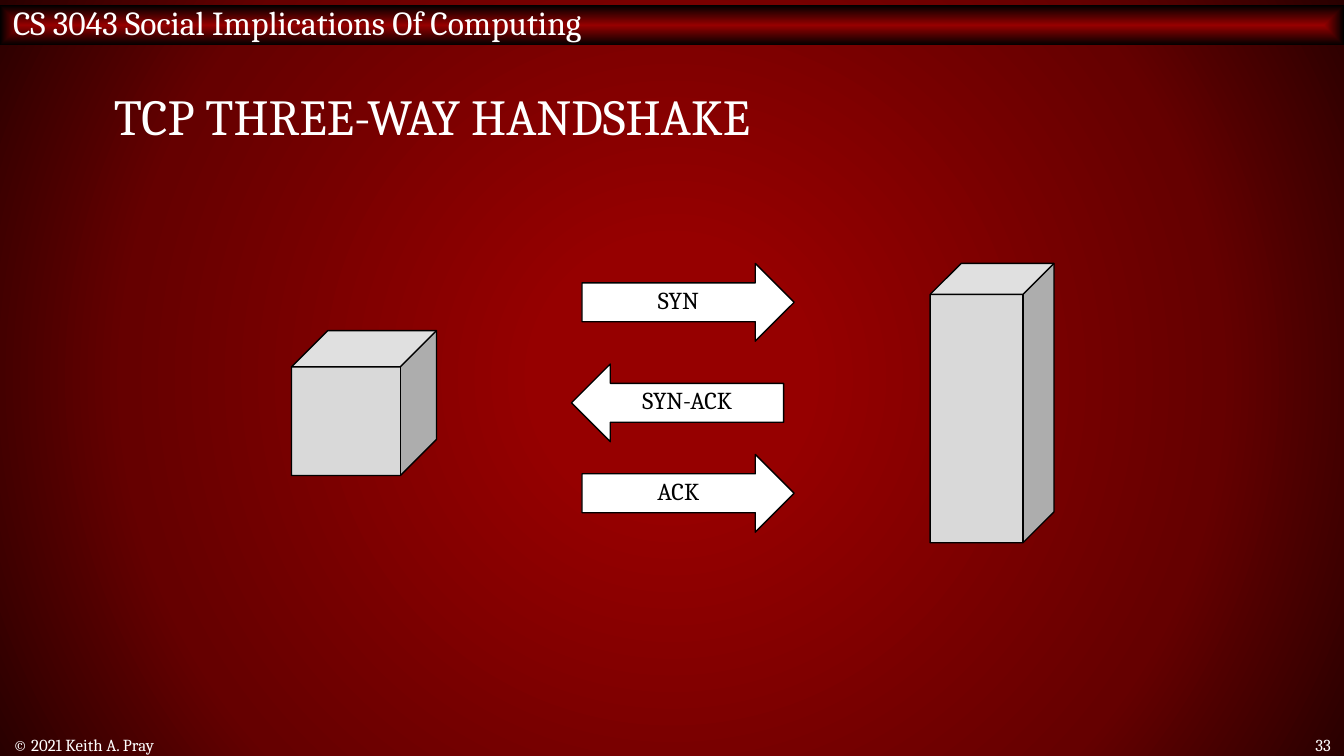
import pptx
import pptx.util
import pptx.oxml
import pptx.oxml.ns
from pptx.dml.color import RGBColor
from pptx.enum.shapes import MSO_SHAPE
from pptx.enum.text import MSO_ANCHOR, PP_ALIGN

Cm = pptx.util.Cm
FONT = "Cambria"
WHITE, BLACK, GREY = "FFFFFF", "000000", "D9D9D9"
WIDE, HIGH = 25.4, 14.29

COURSE = "CS 3043 Social Implications Of Computing"
TITLE = "TCP THREE-WAY HANDSHAKE"
GLOW = [(17, "960000"), (71, "650000"), (100, "290000")]
SHEEN = [(0, "960000"), (100, "000000")]

# left, top, width, height in cm
HOSTS = [(5.51, 6.25, 2.74, 2.74), (17.58, 4.98, 2.34, 5.28)]
# label, preset, left, top in cm
STEPS = [
    ("SYN", MSO_SHAPE.RIGHT_ARROW, 11, 4.98),
    ("SYN-ACK", MSO_SHAPE.LEFT_ARROW, 10.8, 6.88),
    ("ACK", MSO_SHAPE.RIGHT_ARROW, 11, 8.59),
]
ARROW = (4.01, 1.47)
FOOT = 0.41
# text, left, width in cm, alignment
NOTES = [
    ("© 2021 Keith A. Pray", 0, 15.44, PP_ALIGN.LEFT),
    ("33", 23.67, 1.73, PP_ALIGN.RIGHT),
]


def color(code):
    return RGBColor.from_string(code)


def radiate(fill, root, stops, path):
    """Fill with a gradient that spreads from the centre."""
    fill.gradient()
    old = next(root.iter(pptx.oxml.ns.qn("a:gradFill")))
    marks = "".join(
        f'<a:gs pos="{pos * 1000}"><a:srgbClr val="{code}"/></a:gs>'
        for pos, code in stops)
    new = pptx.oxml.parse_xml(
        f'<a:gradFill {pptx.oxml.ns.nsdecls("a")} rotWithShape="1">'
        f'<a:gsLst>{marks}</a:gsLst><a:path path="{path}">'
        '<a:fillToRect l="50000" t="50000" r="50000" b="50000"/>'
        '</a:path></a:gradFill>')
    old.getparent().replace(old, new)


def write(shape, text, size, code=WHITE, align=PP_ALIGN.LEFT,
          space=1.0, wrap=True):
    frame = shape.text_frame
    frame.word_wrap = wrap
    frame.vertical_anchor = MSO_ANCHOR.MIDDLE
    para = frame.paragraphs[0]
    para.alignment = align
    para.line_spacing = space
    run = para.add_run()
    run.text = text
    run.font.name = FONT
    run.font.size = pptx.util.Pt(size)
    run.font.color.rgb = color(code)


def block(slide, kind, box, code):
    """Add an outlined solid shape."""
    shape = slide.shapes.add_shape(kind, *map(Cm, box))
    shape.shadow.inherit = False
    shape.fill.solid()
    shape.fill.fore_color.rgb = color(code)
    shape.line.color.rgb = color(BLACK)
    shape.line.width = pptx.util.Pt(0.75)
    return shape


def main():
    deck = pptx.Presentation()
    deck.slide_width, deck.slide_height = Cm(WIDE), Cm(HIGH)
    slide = deck.slides.add_slide(deck.slide_layouts[5])
    radiate(slide.background.fill, slide.element, GLOW, "circle")

    bar = slide.shapes.add_shape(
        MSO_SHAPE.RECTANGLE, Cm(0), Cm(0.1), Cm(WIDE), Cm(0.76))
    bar.shadow.inherit = False
    bar.line.fill.background()
    radiate(bar.fill, bar.element, SHEEN, "shape")
    bar.text_frame.margin_top = 0
    write(bar, COURSE, 18)

    title = slide.shapes.title
    title.left, title.top = Cm(1.9), Cm(1.02)
    title.width, title.height = Cm(21.59), Cm(2.54)
    write(title, TITLE, 27, space=0.8)

    for box in HOSTS:
        block(slide, MSO_SHAPE.CUBE, box, GREY)
    for label, kind, left, top in STEPS:
        arrow = block(slide, kind, (left, top, *ARROW), WHITE)
        write(arrow, label, 13, BLACK, PP_ALIGN.CENTER, 0.8, wrap=False)
    for text, left, width, align in NOTES:
        note = slide.shapes.add_textbox(
            Cm(left), Cm(HIGH - FOOT), Cm(width), Cm(FOOT))
        write(note, text, 9, align=align)

    deck.save("out.pptx")


if __name__ == "__main__":
    main()
